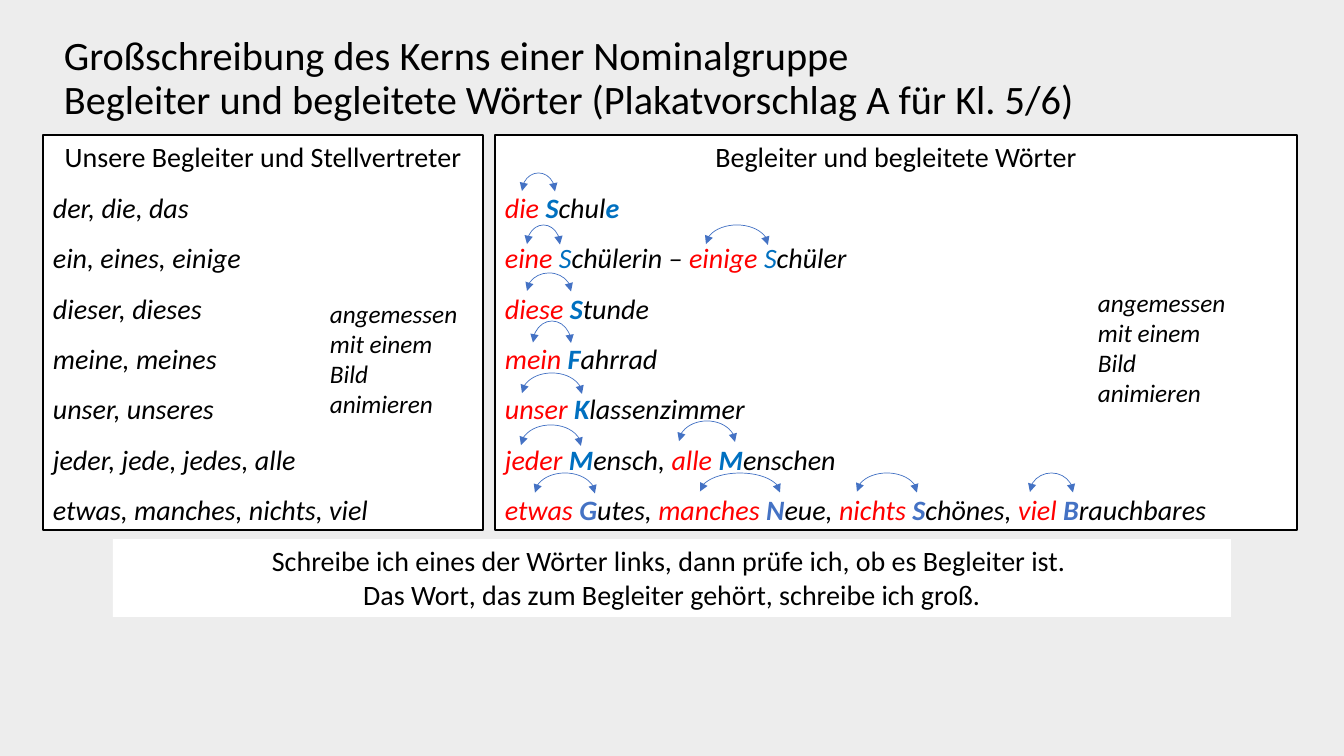
from lxml.etree import SubElement
from pptx import Presentation
from pptx.dml.color import RGBColor
from pptx.enum.shapes import MSO_AUTO_SHAPE_TYPE as Kind
from pptx.enum.text import MSO_ANCHOR as Anchor, MSO_AUTO_SIZE as Fit, PP_ALIGN as Align
from pptx.oxml.ns import qn
from pptx.util import Emu, Pt

SCALE = 914400 / 100.8
BLACK = RGBColor(0x00, 0x00, 0x00)
WHITE = RGBColor(0xFF, 0xFF, 0xFF)
GREY = RGBColor(0xED, 0xED, 0xED)
RED = RGBColor(0xFF, 0x00, 0x00)
BLUE = RGBColor(0x00, 0x70, 0xC0)
STEEL = RGBColor(0x44, 0x72, 0xC4)

TITLE = {"name": "Calibri", "size": Pt(28.8), "color": BLACK}
PLAIN = {**TITLE, "size": Pt(20)}
WORD = {**PLAIN, "italic": True}
HINT = {**WORD, "size": Pt(18)}
GUIDE = {**WORD, "color": RED}
LIGHT = {**WORD, "color": BLUE}
BOLD = {**LIGHT, "bold": True}
DARK = {**BOLD, "color": STEEL}

HEAD = {"alignment": Align.CENTER}
ROW = {"line_spacing": 1.5}

GUIDES = [
    "der, die, das", "ein, eines, einige", "dieser, dieses", "meine, meines",
    "unser, unseres", "jeder, jede, jedes, alle", "etwas, manches, nichts, viel",
]
# Each row: style of the capital, then pairs of guide and noun
GROUPS = [
    (BOLD, [("die ", "Schul")]),
    (LIGHT, [("eine ", "Schülerin – "), ("einige ", "Schüler")]),
    (BOLD, [("diese ", "Stunde")]),
    (BOLD, [("mein ", "Fahrrad")]),
    (BOLD, [("unser ", "Klassenzimmer")]),
    (BOLD, [("jeder ", "Mensch, "), ("alle ", "Menschen")]),
    (DARK, [("etwas ", "Gutes, "), ("manches ", "Neue, "),
            ("nichts ", "Schönes, "), ("viel ", "Brauchbares")]),
]
ARCS = [
    (522, 173, 33, 37), (527, 225, 33, 39), (706, 225, 62, 40),
    (527, 273, 44, 37), (533, 321, 38, 44), (522, 373, 60, 42),
    (521, 425, 60, 42), (679, 421, 56, 42), (535, 473, 60, 41),
    (700, 473, 80, 39), (857, 473, 60, 39), (1030, 473, 43, 39),
]


def px(num):
    return Emu(round(num * SCALE))


def style(font, form):
    for key, val in form.items():
        if key == "color":
            font.color.rgb = val
        else:
            setattr(font, key, val)


def write(shape, paras, anchor=Anchor.TOP, fit=Fit.SHAPE_TO_FIT_TEXT):
    """Fill a shape with paragraphs, each a layout dict and a list of (text, format)."""
    frame = shape.text_frame
    frame.word_wrap = True
    frame.auto_size = fit
    frame.vertical_anchor = anchor
    for num, (layout, runs) in enumerate(paras):
        para = frame.add_paragraph() if num else frame.paragraphs[0]
        for key, val in {"alignment": Align.LEFT, **layout}.items():
            setattr(para, key, val)
        for text, form in runs:
            for part, line in enumerate(text.split("\n")):
                if part:
                    para.add_line_break()
                run = para.add_run()
                run.text = line
                style(run.font, form)


def label(slide, box, paras, **opts):
    write(slide.shapes.add_textbox(*map(px, box)), paras, **opts)


def panel(slide, box, paras, edge=True):
    shape = slide.shapes.add_shape(Kind.RECTANGLE, *map(px, box))
    shape.shadow.inherit = False
    shape.fill.solid()
    shape.fill.fore_color.rgb = WHITE
    if edge:
        shape.line.color.rgb = BLACK
        shape.line.width = Pt(1)
    else:
        shape.line.fill.background()
    write(shape, paras)


def arc(slide, box):
    """Draw a half ellipse with an arrowhead at both ends."""
    shape = slide.shapes.add_shape(Kind.ARC, *map(px, box))
    shape.shadow.inherit = False
    shape.adjustments[0] = 108.888
    shape.adjustments[1] = 0
    shape.fill.background()
    shape.line.color.rgb = STEEL
    shape.line.width = Pt(0.5)
    line = shape.line.fill._xPr
    for end in ("a:headEnd", "a:tailEnd"):
        SubElement(line, qn(end), type="triangle")


def split(form, pairs):
    """Return the runs of one row, with each noun's capital set apart."""
    runs = []
    for guide, noun in pairs:
        runs += [(guide, GUIDE), (noun[0], form), (noun[1:], WORD)]
    return runs


def main():
    deck = Presentation()
    deck.slide_width, deck.slide_height = px(1344), px(756)
    slide = deck.slides.add_slide(deck.slide_layouts[6])
    slide.background.fill.solid()
    slide.background.fill.fore_color.rgb = GREY

    title = ("Großschreibung des Kerns einer Nominalgruppe\n"
             "Begleiter und begleitete Wörter (Plakatvorschlag A für Kl. 5/6)")
    label(slide, (54, 28, 1190, 103), [({"line_spacing": 0.9}, [(title, TITLE)])],
          anchor=Anchor.MIDDLE, fit=Fit.NONE)

    left = [(HEAD, [("Unsere Begleiter und Stellvertreter", PLAIN)])]
    left += [(ROW, [(text, WORD)]) for text in GUIDES]
    panel(slide, (43, 135, 440, 395), left)

    right = [(HEAD, [("Begleiter und begleitete Wörter", PLAIN)])]
    right += [(ROW, split(*group)) for group in GROUPS]
    right[1][1].append(("e", BOLD))
    panel(slide, (495, 135, 802, 395), right)

    rule = ["Schreibe ich eines der Wörter links, dann prüfe ich, ob es Begleiter ist. ",
            "Das Wort, das zum Begleiter gehört, schreibe ich groß."]
    panel(slide, (113, 539, 1118, 78), [(HEAD, [(text, PLAIN)]) for text in rule], edge=False)

    for box in ARCS:
        arc(slide, box)
    for x, y in ((320, 293), (1088, 282)):
        label(slide, (x, y, 157, 132), [({}, [("angemessen mit einem Bild animieren", HINT)])])

    deck.save("out.pptx")


if __name__ == "__main__":
    main()
